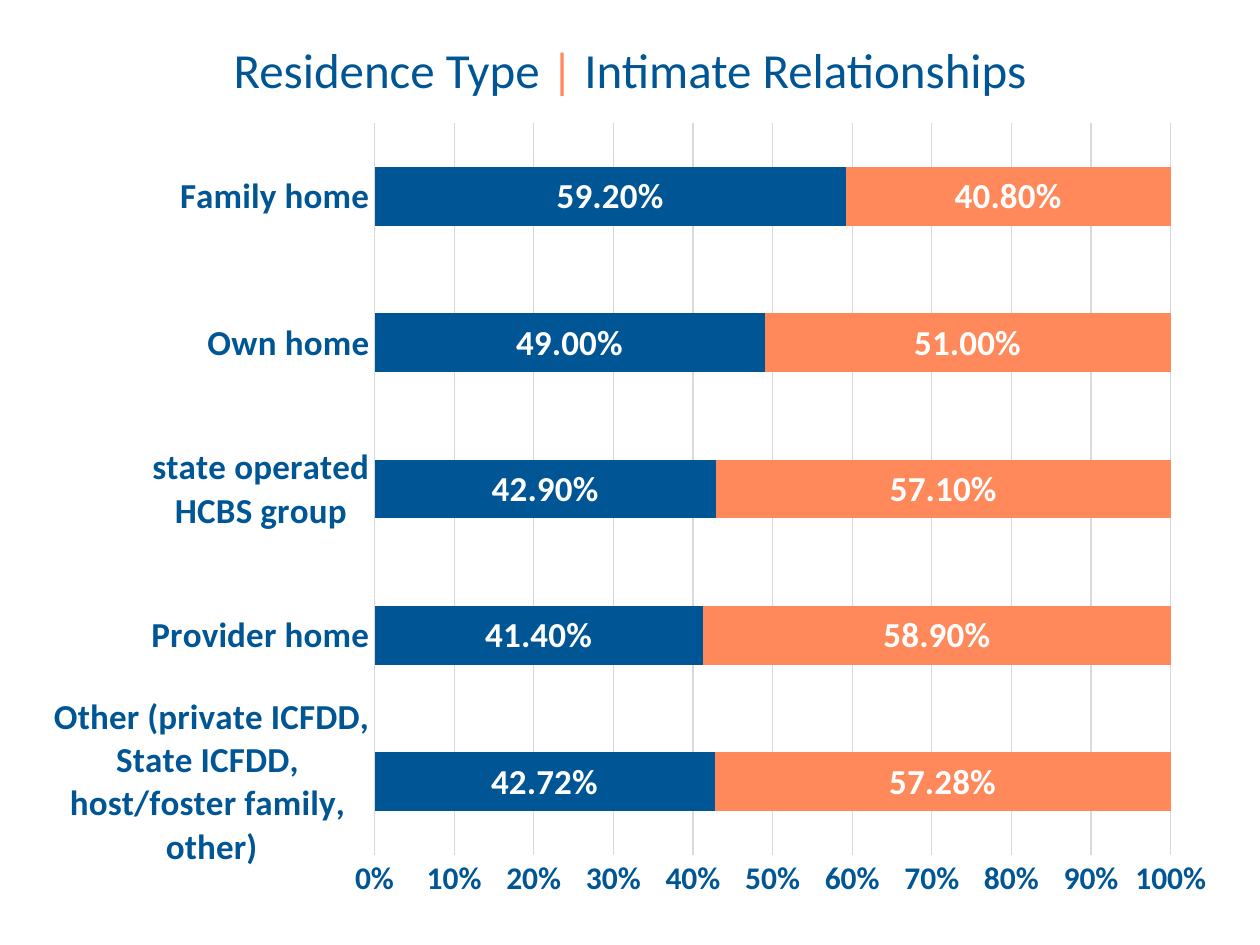
from lxml import etree
from pptx import Presentation
from pptx.chart.data import CategoryChartData
from pptx.dml.color import RGBColor
from pptx.enum import chart as ch, text
from pptx.oxml import ns
from pptx.util import Pt

THEME = {
    "font": "Calibri",
    "blue": RGBColor.from_string("005694"),
    "orange": RGBColor.from_string("FF895A"),
    "white": RGBColor.from_string("FFFFFF"),
    "grid": RGBColor.from_string("D9D9D9"),
    "title": Pt(28),
    "label": Pt(20),
    "scale": Pt(18),
    "hairline": Pt(0.75),
}

TITLE = [("Residence Type ", "blue"), ("|", "orange"), (" Intimate Relationships", "blue")]
RESIDENCES = [
    ("Other (private ICFDD,\nState ICFDD, \nhost/foster family, \nother)", 0.4272, 0.5728),
    ("Provider home", 0.414, 0.589),
    ("state operated\nHCBS group", 0.429, 0.571),
    ("Own home", 0.49, 0.51),
    ("Family home", 0.592, 0.408),
]
SERIES_COLORS = ["blue", "orange"]
SLIDE = (720, 540)
TITLE_BOX = (0, 19, 720, 41)
CHART_BOX = (17, 60.5, 686, 501)
PLOT_BOX = (214, 70.5, 455, 418)


def style_font(font, size, color, bold=True):
    values = {"name": THEME["font"], "size": THEME[size], "bold": bold}
    for name, value in values.items():
        setattr(font, name, value)
    font.color.rgb = THEME[color]


def style_line(line):
    line.width = THEME["hairline"]
    line.color.rgb = THEME["grid"]


def place_plot(chart):
    left, top, width, height = CHART_BOX
    x, y, w, h = PLOT_BOX
    area = chart.element.find(".//" + ns.qn("c:plotArea"))
    for old in area.findall(ns.qn("c:layout")):
        area.remove(old)
    layout = etree.Element(ns.qn("c:layout"))
    manual = etree.SubElement(layout, ns.qn("c:manualLayout"))
    settings = {
        "layoutTarget": "inner", "xMode": "edge", "yMode": "edge",
        "x": (x - left) / width, "y": (y - top) / height,
        "w": w / width, "h": h / height,
    }
    for tag, value in settings.items():
        etree.SubElement(manual, ns.qn("c:" + tag)).set("val", str(value))
    area.insert(0, layout)


def add_residence_chart(s):
    data = CategoryChartData(number_format="0.00%")
    names, *columns = zip(*RESIDENCES)
    data.categories = names
    for values in columns:
        data.add_series("", values)
    chart = s.shapes.add_chart(
        ch.XL_CHART_TYPE.BAR_STACKED_100, *map(Pt, CHART_BOX), data).chart
    chart.has_legend = False
    chart.has_title = False
    chart.font.name = THEME["font"]
    plot = chart.plots[0]
    for name, value in {"gap_width": 150, "overlap": 100, "vary_by_categories": False}.items():
        setattr(plot, name, value)

    for series, color in zip(plot.series, SERIES_COLORS):
        series.format.fill.solid()
        series.format.fill.fore_color.rgb = THEME[color]
        labels = series.data_labels
        values = {"show_value": True, "number_format": "0.00%",
                  "number_format_is_linked": False,
                  "position": ch.XL_LABEL_POSITION.CENTER}
        for key, value in values.items():
            setattr(labels, key, value)
        style_font(labels.font, "label", "white")

    cat, val = chart.category_axis, chart.value_axis
    for axis, size in ((cat, "label"), (val, "scale")):
        axis.major_tick_mark = axis.minor_tick_mark = ch.XL_TICK_MARK.NONE
        style_font(axis.tick_labels.font, size, "blue")
    cat.has_major_gridlines = False
    style_line(cat.format.line)
    for name, value in {"minimum_scale": 0, "maximum_scale": 1, "major_unit": 0.1,
                        "has_major_gridlines": True}.items():
        setattr(val, name, value)
    val.tick_labels.number_format = "0%"
    val.tick_labels.number_format_is_linked = False
    val.format.line.fill.background()
    style_line(val.major_gridlines.format.line)
    place_plot(chart)


def add_title(s):
    tf = s.shapes.add_textbox(*map(Pt, TITLE_BOX)).text_frame
    tf.word_wrap = True
    tf.auto_size = text.MSO_AUTO_SIZE.SHAPE_TO_FIT_TEXT
    p = tf.paragraphs[0]
    p.alignment = text.PP_ALIGN.CENTER
    for words, color in TITLE:
        r = p.add_run()
        r.text = words
        style_font(r.font, "title", color, bold=False)


def main():
    prs = Presentation()
    prs.slide_width, prs.slide_height = map(Pt, SLIDE)
    s = prs.slides.add_slide(prs.slide_layouts[6])
    add_residence_chart(s)
    add_title(s)
    prs.save("out.pptx")


if __name__ == "__main__":
    main()
